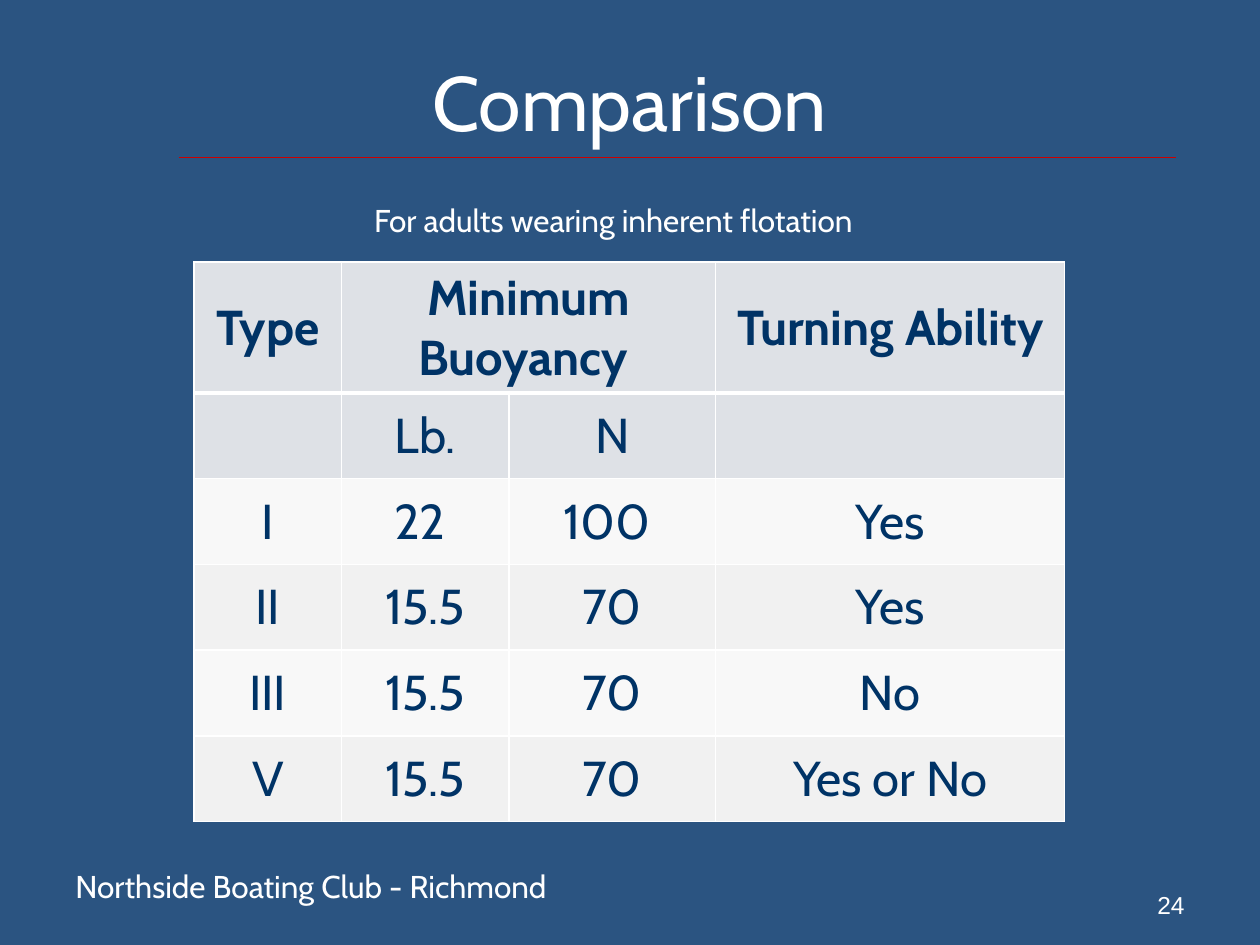
from lxml import etree
from pptx import Presentation
from pptx.dml.color import RGBColor
from pptx.enum.shapes import MSO_CONNECTOR
from pptx.enum.text import MSO_ANCHOR, PP_ALIGN
from pptx.oxml.ns import qn
from pptx.util import Inches, Pt

LEFT, CENTER, RIGHT = PP_ALIGN.LEFT, PP_ALIGN.CENTER, PP_ALIGN.RIGHT
TOP, MIDDLE, BOTTOM = MSO_ANCHOR.TOP, MSO_ANCHOR.MIDDLE, MSO_ANCHOR.BOTTOM
STRAIGHT = MSO_CONNECTOR.STRAIGHT
WHITE, NAVY = "FFFFFF", "003366"


def color(code):
    return RGBColor.from_string(code)


def write(frame, text, size=18, font="Cabin", ink=WHITE, bold=False,
          align=LEFT, anchor=TOP, wrap=True):
    frame.word_wrap = wrap
    frame.vertical_anchor = anchor
    par = frame.paragraphs[0]
    par.alignment = align
    run = par.add_run()
    run.text = text
    run.font.size = Pt(size)
    run.font.name = font
    run.font.bold = bold
    run.font.color.rgb = color(ink)


prs = Presentation()
prs.slide_width, prs.slide_height = Inches(10), Inches(7.5)
slide = prs.slides.add_slide(prs.slide_layouts[6])
slide.background.fill.solid()
slide.background.fill.fore_color.rgb = color("2B5481")

rule = slide.shapes.add_connector(
    STRAIGHT, Inches(1.42), Inches(1.25), Inches(9.33), Inches(1.25))
rule.line.color.rgb = color("CC0000")
rule.line.width = Pt(1)
etree.SubElement(rule.element.spPr, qn("a:effectLst"))

labels = [
    ("Northside Boating Club - Richmond", (0.5, 6.83, 6.08, 0.52), {}),
    ("Comparison", (0.5, 0.42, 9, 0.75),
     dict(size=44, align=CENTER, anchor=MIDDLE)),
    ("24", (7.17, 6.83, 2.33, 0.52),
     dict(size=14, font="Arial", align=RIGHT, anchor=BOTTOM)),
    ("For adults wearing inherent flotation", (2.87, 1.55, 4.25, 0.4),
     dict(wrap=False)),
]
for text, place, style in labels:
    box = slide.shapes.add_textbox(*map(Inches, place))
    write(box.text_frame, text, **style)

rows = [
    ["Type", "Minimum Buoyancy ", "", "Turning Ability"],
    ["", "Lb.", "N", ""],
    ["I", "22 ", "100 ", "Yes"],
    ["II", "15.5", "70", "Yes"],
    ["III", "15.5", "70", "No"],
    ["V", "15.5", "70", "Yes or No"],
]
fills = ["DEE1E6"] * 2 + ["F8F8F8", "F1F1F1"] * 2
widths = [1.17, 1.33, 1.64, 2.77]
heights = [1.04] + [0.68] * 5

table = slide.shapes.add_table(
    len(rows), len(widths), Inches(1.54), Inches(2.08),
    Inches(sum(widths)), Inches(sum(heights))).table
for col, width in zip(table.columns, widths):
    col.width = Inches(width)
for row, height in zip(table.rows, heights):
    row.height = Inches(height)
table.cell(0, 1).merge(table.cell(0, 2))

for r, row in enumerate(rows):
    for c, text in enumerate(row):
        cell = table.cell(r, c)
        props = cell._tc.get_or_add_tcPr()
        for side in "LRTB":
            thick = (r, side) in [(0, "B"), (1, "T")]
            line = etree.SubElement(props, qn(f"a:ln{side}"),
                                    w=str(Pt(3 if thick else 1)))
            fill = etree.SubElement(line, qn("a:solidFill"))
            etree.SubElement(fill, qn("a:srgbClr"), val=WHITE)
        cell.fill.solid()
        cell.fill.fore_color.rgb = color(fills[r])
        cell.vertical_anchor = MIDDLE
        if text:
            write(cell.text_frame, text, size=28, ink=NAVY, bold=r == 0,
                  align=CENTER, anchor=None, wrap=None)

prs.save("out.pptx")
